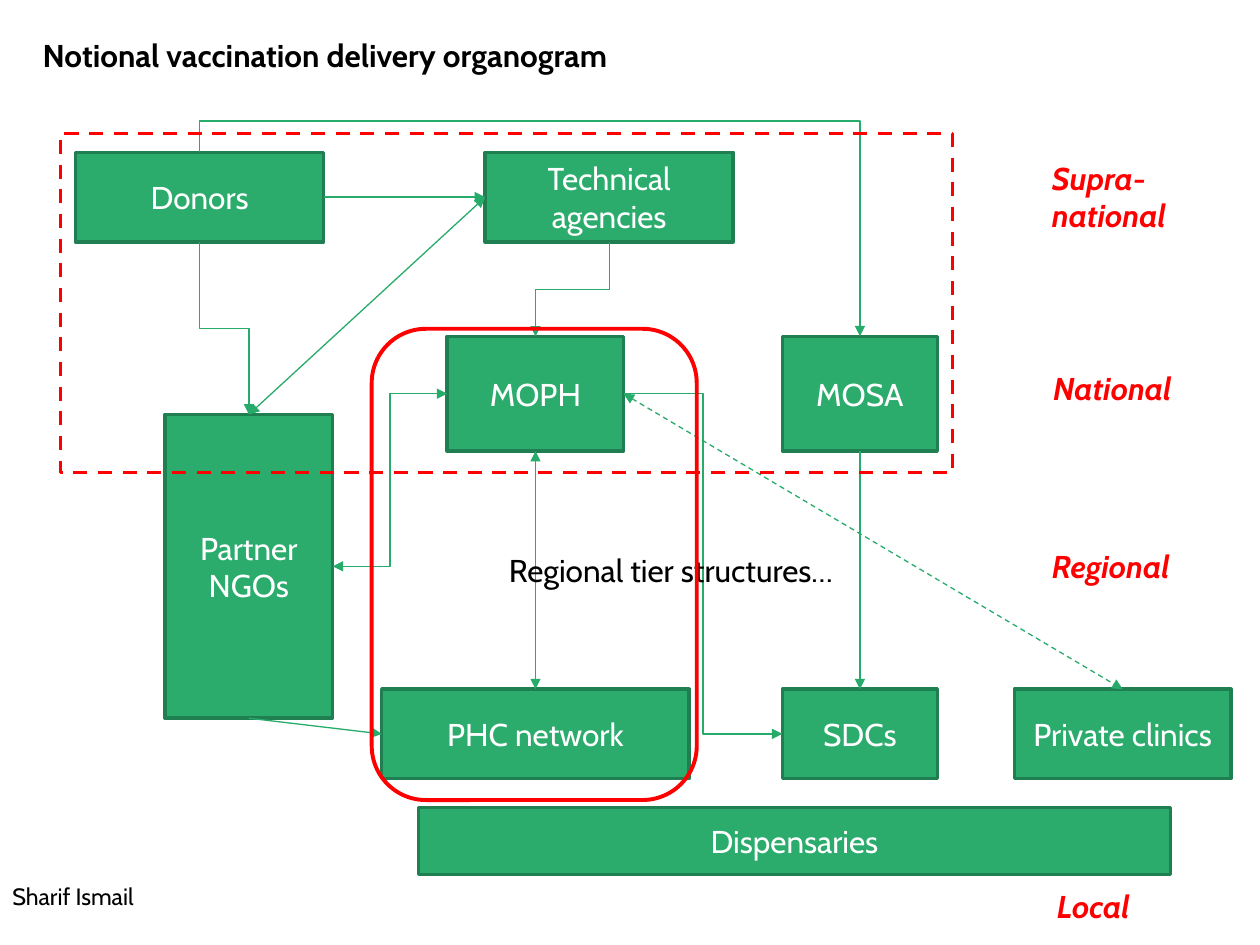
import pptx
import pptx.dml.color
import pptx.enum.dml
import pptx.enum.shapes
import pptx.enum.text
import pptx.oxml.ns
import pptx.util
from lxml import etree

Inches = pptx.util.Inches
SHAPES = pptx.enum.shapes.MSO_SHAPE
CONNECTORS = pptx.enum.shapes.MSO_CONNECTOR
ALIGN = pptx.enum.text.PP_ALIGN
ANCHOR = pptx.enum.text.MSO_ANCHOR
DASH = pptx.enum.dml.MSO_LINE.DASH

THEME = {
    "font": "Cabin",
    "box": "2BAC6D", "box_line": "207F51", "arrow": "27AB6B",
    "accent": "FF0000", "ink": "000000", "paper": "FFFFFF",
    "body_size": 18, "author_size": 13.5,
    "box_width": 2, "arrow_width": 0.75, "frame_width": 2, "focus_width": 2.25,
}

# name: (left, top, width, height)
BOXES = {
    "MOPH": (3.55, 2.67, 1.4, 0.91),
    "PHC network": (3.03, 5.47, 2.44, 0.71),
    "Donors": (0.6, 1.21, 1.97, 0.71),
    "Technical agencies": (3.85, 1.21, 1.97, 0.71),
    "Partner NGOs": (1.31, 3.29, 1.33, 2.41),
    "MOSA": (6.21, 2.67, 1.23, 0.91),
    "SDCs": (6.21, 5.47, 1.23, 0.71),
    "Private clinics": (8.05, 5.47, 1.72, 0.71),
    "Dispensaries": (3.32, 6.41, 5.97, 0.53),
}

# source, side, target, side, options
LINKS = [
    ("Technical agencies", "bottom", "MOPH", "top", {"elbow": True}),
    ("Donors", "bottom", "Partner NGOs", "top", {"elbow": True}),
    ("Donors", "right", "Technical agencies", "left", {"elbow": True}),
    ("Partner NGOs", "right", "MOPH", "left", {"elbow": True, "both_ends": True}),
    ("Partner NGOs", "bottom", "PHC network", "left", {}),
    ("MOPH", "right", "SDCs", "left", {"elbow": True}),
    ("MOSA", "bottom", "SDCs", "top", {}),
    ("MOPH", "right", "Private clinics", "top", {"both_ends": True, "dashed": True}),
    ("MOPH", "bottom", "PHC network", "top", {"both_ends": True}),
    ("Donors", "top", "MOSA", "top", {"elbow": True, "bend": -0.17}),
    ("Technical agencies", "left", "Partner NGOs", "top", {"both_ends": True}),
]

TITLE = ("Notional vaccination delivery organogram", (0.24, 0.24, 5.68, 0.4))
REGIONAL_NOTE = ("Regional tier structures…", (3.21, 4.3, 4.23, 0.44))
AUTHOR = ("Sharif Ismail", (0, 6.95, 3.38, 0.4))
TIERS = [
    ("Supra-national", (8.25, 1.21, 1.58, 0.71)),
    ("National", (8.26, 2.88, 1.58, 0.4)),
    ("Regional", (8.25, 4.29, 1.58, 0.4)),
    ("Local", (8.29, 6.99, 1.58, 0.4)),
]
UPPER_TIERS_FRAME = (0.48, 1.06, 7.08, 2.69)
FOCUS_FRAME = (2.95, 2.61, 2.58, 3.74)


def color(name):
    return pptx.dml.color.RGBColor.from_string(THEME[name])


def write(shape, text, ink="ink", size="body_size", align=ALIGN.LEFT,
          anchor=ANCHOR.TOP, bold=False, italic=False):
    frame = shape.text_frame
    frame.word_wrap = True
    frame.vertical_anchor = anchor
    paragraph = frame.paragraphs[0]
    paragraph.alignment = align
    run = paragraph.add_run()
    run.text = text
    run.font.name = THEME["font"]
    run.font.size = pptx.util.Pt(THEME[size])
    run.font.color.rgb = color(ink)
    run.font.bold = bold
    run.font.italic = italic


def style_line(line, ink, width, dashed=False):
    line.color.rgb = color(ink)
    line.width = pptx.util.Pt(THEME[width])
    if dashed:
        line.dash_style = DASH


def add_outline(slide, kind, place, ink, width, fill=None, dashed=False):
    shape = slide.shapes.add_shape(kind, *map(Inches, place))
    shape.shadow.inherit = False
    if fill:
        shape.fill.solid()
        shape.fill.fore_color.rgb = color(fill)
    else:
        shape.fill.background()
    style_line(shape.line, ink, width, dashed)
    return shape


def add_label(slide, text, place, **style):
    write(slide.shapes.add_textbox(*map(Inches, place)), text, **style)


def side_point(box, side):
    """Return the middle of one side of a box."""
    left, top, width, height = BOXES[box]
    return {
        "left": (left, top + height / 2),
        "right": (left + width, top + height / 2),
        "top": (left + width / 2, top),
        "bottom": (left + width / 2, top + height),
    }[side]


def add_link(slide, source, source_side, target, target_side,
             elbow=False, both_ends=False, dashed=False, bend=None):
    x1, y1 = side_point(source, source_side)
    x2, y2 = side_point(target, target_side)
    turned = elbow and source_side in ("top", "bottom")
    rightward = x2 > x1
    if turned:
        # An elbow that leaves vertically is a horizontal one turned about its centre.
        center_x, center_y = (x1 + x2) / 2, (y1 + y2) / 2
        half_run, half_rise = (y2 - y1) / 2, abs(x2 - x1) / 2
        if rightward:
            half_run = -half_run
        x1, x2 = center_x - half_run, center_x + half_run
        y1, y2 = center_y - half_rise, center_y + half_rise
    kind = CONNECTORS.ELBOW if elbow else CONNECTORS.STRAIGHT
    connector = slide.shapes.add_connector(kind, *map(Inches, (x1, y1, x2, y2)))
    style_line(connector.line, "arrow", "arrow_width", dashed)

    qn = pptx.oxml.ns.qn
    properties = connector._element.spPr
    if turned:
        degrees = 270 if rightward else 90
        properties.find(qn("a:xfrm")).set("rot", str(degrees * 60000))
    if bend is not None:
        adjustments = properties.find(qn("a:prstGeom")).find(qn("a:avLst"))
        etree.SubElement(adjustments, qn("a:gd"), name="adj1",
                         fmla=f"val {round(bend * 100000)}")
    line = properties.find(qn("a:ln"))
    for end in ("a:headEnd", "a:tailEnd") if both_ends else ("a:tailEnd",):
        etree.SubElement(line, qn(end), type="triangle")
    etree.SubElement(properties, qn("a:effectLst"))


def main():
    presentation = pptx.Presentation()
    presentation.slide_width = Inches(10)
    presentation.slide_height = Inches(7.5)
    slide = presentation.slides.add_slide(presentation.slide_layouts[6])
    slide.background.fill.solid()
    slide.background.fill.fore_color.rgb = color("paper")

    for name, place in BOXES.items():
        box = add_outline(slide, SHAPES.RECTANGLE, place, "box_line", "box_width", fill="box")
        write(box, name, ink="paper", align=ALIGN.CENTER, anchor=ANCHOR.MIDDLE)
    for *ends, options in LINKS:
        add_link(slide, *ends, **options)

    add_outline(slide, SHAPES.RECTANGLE, UPPER_TIERS_FRAME, "accent", "frame_width", dashed=True)
    add_label(slide, *TITLE, bold=True)
    add_label(slide, *REGIONAL_NOTE, align=ALIGN.CENTER, anchor=ANCHOR.MIDDLE)
    for name, place in TIERS:
        add_label(slide, name, place, ink="accent", bold=True, italic=True)
    add_label(slide, *AUTHOR, size="author_size")
    add_outline(slide, SHAPES.ROUNDED_RECTANGLE, FOCUS_FRAME, "accent", "focus_width")

    presentation.save("out.pptx")


if __name__ == "__main__":
    main()
